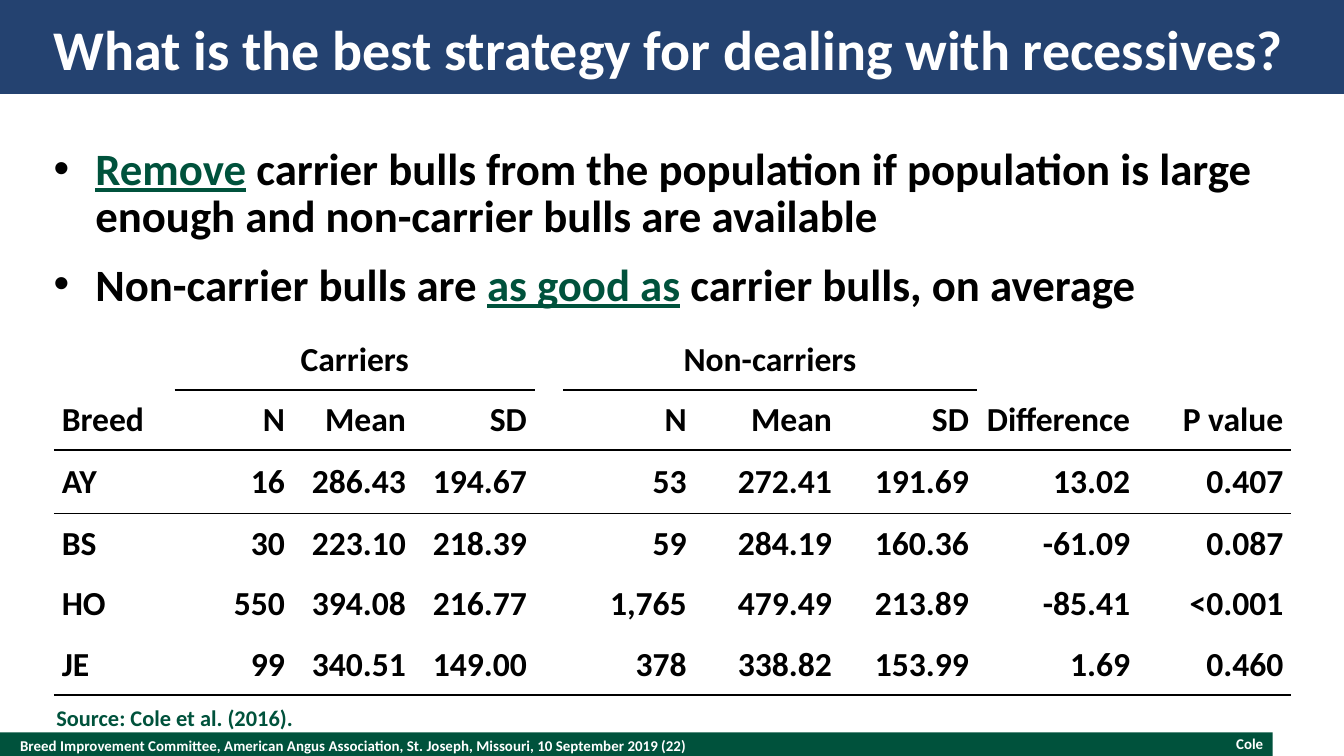
import pptx
import pptx.util
import pptx.dml.color
import pptx.enum.shapes
import pptx.enum.text
from lxml import etree
from pptx.oxml.ns import qn

Inches = pptx.util.Inches
Pt = pptx.util.Pt
ALIGN = pptx.enum.text.PP_ALIGN
ANCHOR = pptx.enum.text.MSO_ANCHOR

COLORS = {"green": "00523C", "navy": "244270", "white": "FFFFFF", "black": "000000"}
FONT = "Calibri"
PLAIN = "{2D5ABB26-0587-4C30-8999-92F81FD0307C}"  # table style without grid

POINTS = [
    [("Remove", True),
     (" carrier bulls from the population if population is large "
      "enough and non-carrier bulls are available", False)],
    [("Non-carrier bulls are ", False), ("as good as", True),
     (" carrier bulls, on average", False)],
]
WIDTHS = [0.9, 0.88, 0.9, 0.9, 0.21, 0.98, 1.08, 1.02, 1.2, 1.14]
HEIGHTS = [0.45, 0.45, 0.47, 0.45, 0.45, 0.45]
GROUPS = {1: "Carriers", 5: "Non-carriers"}
ROWS = [
    [GROUPS.get(col, "") for col in range(len(WIDTHS))],
    ["Breed", "N", "Mean", "SD", "", "N", "Mean", "SD", "Difference", "P value"],
    ["AY", "16", "286.43", "194.67", "", "53", "272.41", "191.69", "13.02", "0.407"],
    ["BS", "30", "223.10", "218.39", "", "59", "284.19", "160.36", "-61.09", "0.087"],
    ["HO", "550", "394.08", "216.77", "", "1,765", "479.49", "213.89", "-85.41", "<0.001"],
    ["JE", "99", "340.51", "149.00", "", "378", "338.82", "153.99", "1.69", "0.460"],
]
RULES = {2, 6}  # row edges with a line across the whole table


def rgb(name):
    return pptx.dml.color.RGBColor.from_string(COLORS[name])


def add_run(para, text, size=18, color="black", line=False):
    run = para.add_run()
    run.text = text
    font = run.font
    font.name, font.size, font.bold = FONT, Pt(size), True
    font.color.rgb = rgb(color)
    if line:
        font.underline = True


def add_bar(slide, left, top, width, height, color):
    bar = slide.shapes.add_shape(
        pptx.enum.shapes.MSO_SHAPE.RECTANGLE,
        Inches(left), Inches(top), Inches(width), Inches(height))
    bar.shadow.inherit = False
    bar.fill.solid()
    bar.fill.fore_color.rgb = rgb(color)
    bar.line.fill.background()


def add_box(slide, left, top, width, height, inset=(0, 0), wrap=True,
            anchor=ANCHOR.MIDDLE):
    """Add an empty text box and return its frame."""
    box = slide.shapes.add_textbox(
        Inches(left), Inches(top), Inches(width), Inches(height))
    frame = box.text_frame
    frame.word_wrap = wrap
    frame.vertical_anchor = anchor
    frame.margin_left = frame.margin_right = Inches(inset[0])
    frame.margin_top = frame.margin_bottom = Inches(inset[1])
    return frame


def add_text(slide, text, *place, align=ALIGN.LEFT, size=8, color="white", **box):
    para = add_box(slide, *place, **box).paragraphs[0]
    para.alignment = align
    add_run(para, text, size=size, color=color)


def set_bullet(para):
    props = para._p.get_or_add_pPr()
    props.set("marL", str(Inches(0.31)))
    props.set("indent", str(-Inches(0.31)))
    tint = etree.SubElement(props, qn("a:buClr"))
    etree.SubElement(tint, qn("a:srgbClr"), val=COLORS["black"])
    etree.SubElement(props, qn("a:buFont"), typeface="Arial")
    etree.SubElement(props, qn("a:buChar"), char="•")


def add_points(slide):
    frame = add_box(slide, 0.4, 1.1, 9.2, 4, anchor=ANCHOR.TOP)
    for i, parts in enumerate(POINTS):
        para = frame.add_paragraph() if i else frame.paragraphs[0]
        set_bullet(para)
        para.line_spacing = Pt(25)
        para.space_after = Pt(12)
        for text, key in parts:
            add_run(para, text, size=24, color="green" if key else "black", line=key)


def has_rule(edge, col):
    grouped = any(start <= col < start + 3 for start in GROUPS)
    return edge in RULES or (edge == 1 and grouped)


def set_border(cell, side):
    props = cell._tc.get_or_add_tcPr()
    line = etree.SubElement(props, qn("a:" + side), w=str(Pt(1)))
    fill = etree.SubElement(line, qn("a:solidFill"))
    etree.SubElement(fill, qn("a:srgbClr"), val=COLORS["black"])


def fill_cell(cell, text, row, col):
    cell.margin_left = cell.margin_right = Inches(0.06)
    cell.margin_top = cell.margin_bottom = 0
    cell.vertical_anchor = ANCHOR.MIDDLE
    for side, edge in (("lnT", row), ("lnB", row + 1)):
        if has_rule(edge, col):
            set_border(cell, side)
    cell.fill.background()
    if text:
        para = cell.text_frame.paragraphs[0]
        if row == 0:
            para.alignment = ALIGN.CENTER
        else:
            para.alignment = ALIGN.RIGHT if col else ALIGN.LEFT
        add_run(para, text)


def add_grid(slide):
    table = slide.shapes.add_table(
        len(ROWS), len(WIDTHS), Inches(0.4), Inches(2.45),
        Inches(9.2), Inches(sum(HEIGHTS))).table
    table.first_row = table.horz_banding = False
    table._tbl.tblPr.find(qn("a:tableStyleId")).text = PLAIN
    for col, width in enumerate(WIDTHS):
        table.columns[col].width = Inches(width)
    for row, height in enumerate(HEIGHTS):
        table.rows[row].height = Inches(height)
    for start in GROUPS:
        table.cell(0, start).merge(table.cell(0, start + 2))
    for row, texts in enumerate(ROWS):
        for col, text in enumerate(texts):
            fill_cell(table.cell(row, col), text, row, col)


def main():
    deck = pptx.Presentation()
    deck.slide_width = Inches(10)
    deck.slide_height = Inches(10 * 9 / 16)
    slide = deck.slides.add_slide(deck.slide_layouts[6])
    add_bar(slide, 0, 5.45, 9.47, 0.2, "green")
    add_bar(slide, 0, 0, 10, 0.7, "navy")
    add_text(slide, "Breed Improvement Committee, American Angus Association, "
             "St. Joseph, Missouri, 10 September 2019 (22)", 0.15, 5.45, 6.5, 0.2)
    add_text(slide, "Cole", 7.2, 5.47, 2.2, 0.13, align=ALIGN.RIGHT)
    add_text(slide, "What is the best strategy for dealing with recessives?",
             0.4, 0.1, 9.2, 0.52, size=30)
    add_points(slide)
    add_grid(slide)
    add_text(slide, "Source: Cole et al. (2016).", 0.29, 5.19, 1.99, 0.3,
             align=ALIGN.RIGHT, size=12, color="green", inset=(0.1, 0.05),
             wrap=False, anchor=ANCHOR.TOP)
    deck.save("out.pptx")


if __name__ == "__main__":
    main()
